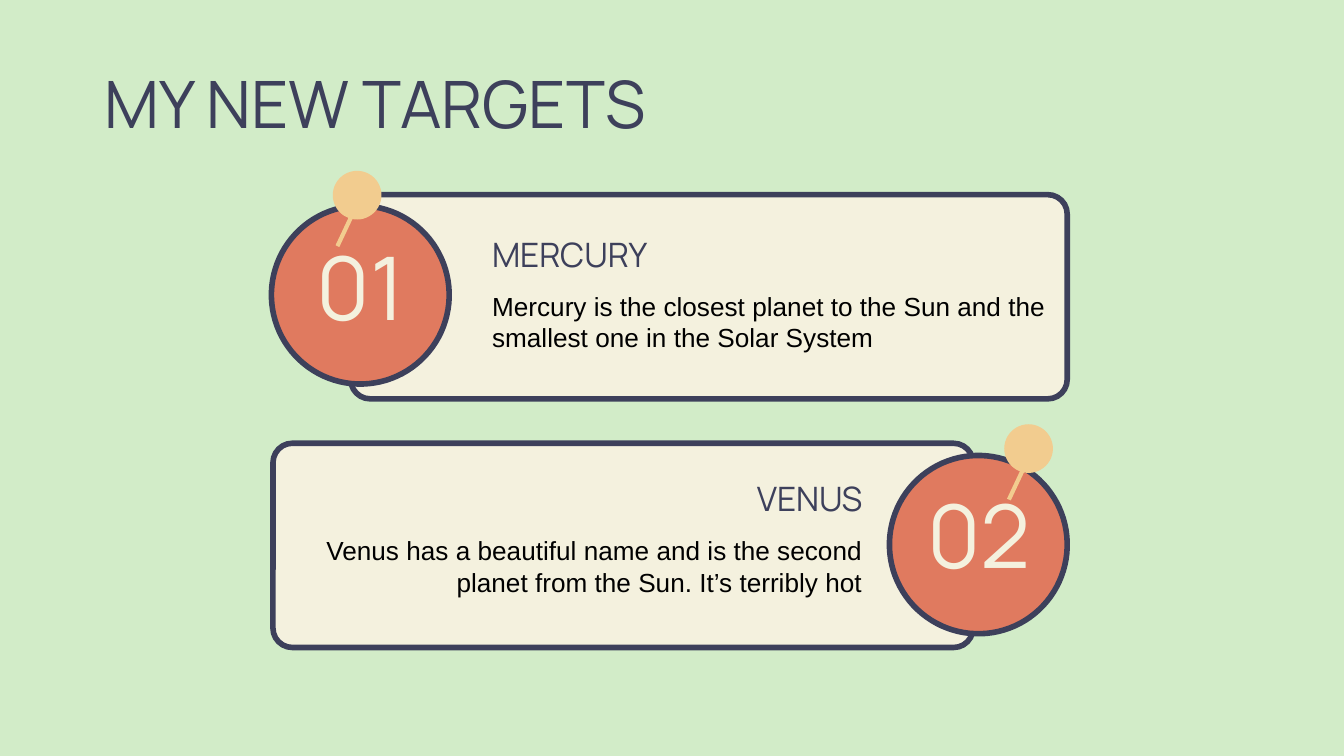
"""Build a slide with two pinned, numbered planet cards."""
from dataclasses import dataclass

from pptx import Presentation
from pptx.dml.color import RGBColor
from pptx.enum.shapes import MSO_SHAPE as Preset
from pptx.enum.text import MSO_ANCHOR as Anchor, PP_ALIGN as Align
from pptx.util import Cm, Pt

MINT = RGBColor(0xD2, 0xEC, 0xC8)
CREAM = RGBColor(0xF4, 0xF1, 0xDE)
NAVY = RGBColor(0x3D, 0x40, 0x5B)
CORAL = RGBColor(0xE0, 0x7A, 0x5F)
SAND = RGBColor(0xF2, 0xCC, 0x8F)
BLACK = RGBColor(0, 0, 0)


@dataclass(frozen=True)
class Area:
    left: float
    top: float
    width: float
    height: float

    def lengths(self) -> tuple:
        return Cm(self.left), Cm(self.top), Cm(self.width), Cm(self.height)


@dataclass(frozen=True)
class Style:
    font: str
    size: int
    color: RGBColor


TITLE = Style("Manrope", 35, NAVY)
HEADING = Style("Manrope", 18, NAVY)
NUMBER = Style("Manrope", 47, CREAM)
BODY = Style("Arial", 14, BLACK)


@dataclass(frozen=True)
class Target:
    number: str
    heading: str
    lines: tuple[str, ...]
    align: Align
    card: Area
    disc: tuple[float, float]
    needle: tuple[float, float]
    text: tuple[float, float]
    number_top: float


TARGETS = (
    Target("02", "VENUS",
           ("Venus has a beautiful name and is the second",
            "planet from the Sun. It’s terribly hot"),
           Align.RIGHT, Area(5.16, 8.38, 13.23, 3.86),
           (16.81, 8.61), (19.32, 8.14), (5.61, 8.89), 8.89),
    Target("01", "MERCURY",
           ("Mercury is the closest planet to the Sun and the "
            "smallest one in the Solar System",),
           Align.LEFT, Area(6.63, 3.68, 13.54, 3.86),
           (5.13, 3.89), (6.63, 3.35), (9.3, 4.27), 4.22),
)


def add_shape(page, preset: Preset, area: Area, fill: RGBColor,
              outlined: bool = False, rotation: float = 0):
    shape = page.shapes.add_shape(preset, *area.lengths())
    shape.shadow.inherit = False
    shape.rotation = rotation
    shape.fill.solid()
    shape.fill.fore_color.rgb = fill
    if outlined:
        shape.line.color.rgb = NAVY
        shape.line.width = Pt(3)
    else:
        shape.line.fill.background()
    return shape


def add_text(page, area: Area, lines: tuple[str, ...], style: Style,
             align: Align = Align.LEFT, anchor: Anchor = Anchor.TOP) -> None:
    box = page.shapes.add_textbox(*area.lengths())
    frame = box.text_frame
    frame.word_wrap = True
    frame.vertical_anchor = anchor
    frame.margin_left = frame.margin_right = 0
    frame.margin_top = frame.margin_bottom = 0
    for index, line in enumerate(lines):
        para = frame.add_paragraph() if index else frame.paragraphs[0]
        para.alignment = align
        span = para.add_run()
        span.text = line
        span.font.name = style.font
        span.font.size = Pt(style.size)
        span.font.color.rgb = style.color


def add_pin(page, left: float, top: float) -> None:
    add_shape(page, Preset.RECTANGLE, Area(left, top, 0.08, 1.37), SAND, rotation=25.2)
    add_shape(page, Preset.OVAL, Area(left - 0.34, top - 0.12, 0.92, 0.92), SAND)


def add_target(page, target: Target) -> None:
    card = add_shape(page, Preset.ROUNDED_RECTANGLE, target.card, CREAM, outlined=True)
    card.adjustments[0] = 0.095
    disc_left, disc_top = target.disc
    add_shape(page, Preset.OVAL, Area(disc_left, disc_top, 3.36, 3.37), CORAL,
              outlined=True, rotation=2)
    add_pin(page, *target.needle)
    left, top = target.text
    add_text(page, Area(left, top, 10.69, 0.91), (target.heading,), HEADING,
             target.align, Anchor.BOTTOM)
    add_text(page, Area(left, top + 1.22, 10.69, 1.7), target.lines, BODY, target.align)
    add_text(page, Area(disc_left - 0.05, target.number_top, 3.48, 2.18),
             (target.number,), NUMBER, Align.CENTER, Anchor.BOTTOM)


def main() -> None:
    deck = Presentation()
    deck.slide_width, deck.slide_height = Cm(25.4), Cm(14.29)
    page = deck.slides.add_slide(deck.slide_layouts[6])
    page.background.fill.solid()
    page.background.fill.fore_color.rgb = MINT
    add_text(page, Area(1.98, 1.19, 21.44, 1.7), ("MY NEW TARGETS",), TITLE)
    for target in TARGETS:
        add_target(page, target)
    deck.save("out.pptx")


if __name__ == "__main__":
    main()
